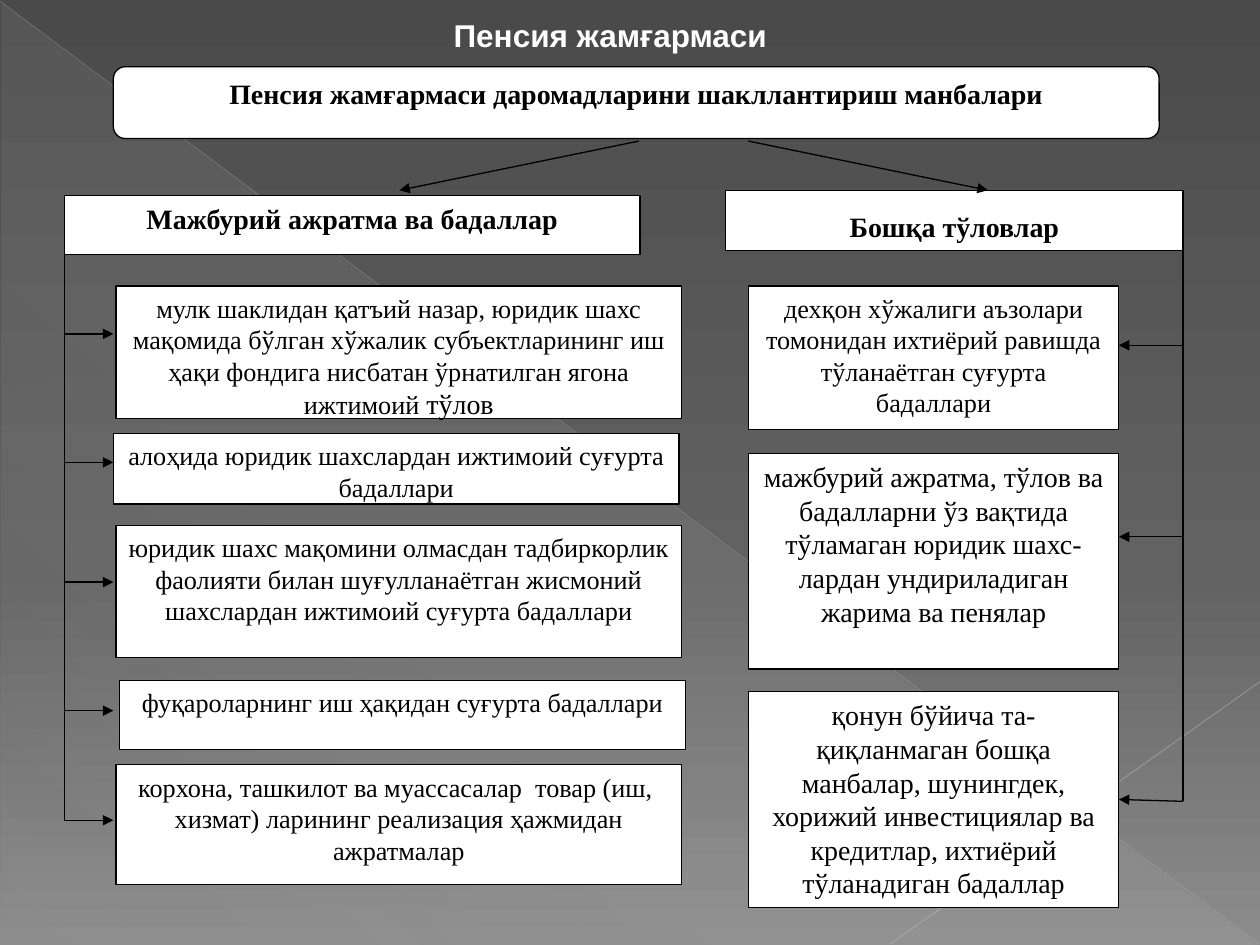
from lxml import etree
from pptx import Presentation
from pptx import util as u
from pptx.dml.color import RGBColor
from pptx.enum import shapes, text
from pptx.oxml import parse_xml
from pptx.oxml.ns import nsdecls, qn

Inches = u.Inches
SERIF = "Times New Roman"
BLACK, WHITE = "000000", "FFFFFF"


def color(value):
    return RGBColor.from_string(value)


def gradient(stops, angle):
    """Gradient fill from (position %, colour, opacity %) stops."""
    entries = "".join(
        f'<a:gs pos="{position * 1000}"><a:srgbClr val="{value}">'
        f'<a:alpha val="{opacity * 1000}"/></a:srgbClr></a:gs>'
        for position, value, opacity in stops)
    return parse_xml(f'<a:gradFill {nsdecls("a")} rotWithShape="1"><a:gsLst>{entries}</a:gsLst>'
                     f'<a:lin ang="{angle * 60000}" scaled="0"/></a:gradFill>')


def add_line(slide, start, end, value=BLACK, width=0.75, arrow=False, opacity=100):
    connector = slide.shapes.add_connector(
        shapes.MSO_CONNECTOR.STRAIGHT, *map(Inches, (*start, *end)))
    connector.line.color.rgb = color(value)
    connector.line.width = u.Pt(width)
    outline = connector.line._get_or_add_ln()
    if opacity < 100:
        shade = outline.find(".//" + qn("a:srgbClr"))
        etree.SubElement(shade, qn("a:alpha"), val=str(opacity * 1000))
    if arrow:
        etree.SubElement(outline, qn("a:tailEnd"), type="triangle")
    etree.SubElement(connector._element.spPr, qn("a:effectLst"))
    return connector


def add_run(paragraph, words, size, font=SERIF, value=BLACK, bold=False):
    run = paragraph.add_run()
    run.text = words
    run.font.size = u.Pt(size)
    run.font.name = font
    run.font.bold = bold
    run.font.color.rgb = color(value)


def add_box(slide, box, runs, bold=False, rounded=False):
    """White outlined box with centred text given as (words, size) runs."""
    kind = shapes.MSO_SHAPE.ROUNDED_RECTANGLE if rounded else shapes.MSO_SHAPE.RECTANGLE
    shape = slide.shapes.add_shape(kind, *map(Inches, box))
    shape.shadow.inherit = False
    shape.fill.solid()
    shape.fill.fore_color.rgb = color(WHITE)
    shape.line.color.rgb = color(BLACK)
    shape.line.width = u.Pt(0.75)
    frame = shape.text_frame
    frame.word_wrap = True
    frame.vertical_anchor = text.MSO_ANCHOR.TOP
    paragraph = frame.paragraphs[0]
    paragraph.alignment = text.PP_ALIGN.CENTER
    for words, size in runs:
        add_run(paragraph, words, size, bold=bold)
    return shape


def add_background(slide, width, height):
    fill = slide.background.fill
    fill.solid()
    properties = slide._element.cSld.find(qn("p:bg")).find(qn("p:bgPr"))
    properties.replace(properties.find(qn("a:solidFill")), gradient(
        [(0, "4A4A4A", 100), (60, "626262", 100), (100, "8C8C8C", 100)], 90))

    # Faint triangle and diagonal lines
    triangle = slide.shapes.add_shape(
        shapes.MSO_SHAPE.RIGHT_TRIANGLE, *map(Inches, (0.01, 0.02, width - 0.02, height - 0.02)))
    triangle.shadow.inherit = False
    triangle.line.fill.background()
    triangle.fill.solid()
    properties = triangle._element.spPr
    properties.replace(properties.find(qn("a:solidFill")), gradient(
        [(0, "D2D2D2", 10), (70, "D2D2D2", 8), (100, "D2D2D2", 1)], 133))
    add_line(slide, (0, 0.01), (width - 0.01, height - 0.01), "BFBFBF", 0.39, opacity=35)
    add_line(slide, (width, 5.41), (7.07, height - 0.01), "C6C6C6", 0.47, opacity=45)


def add_title(slide, box, words):
    title = slide.shapes.title
    title.left, title.top, title.width, title.height = map(Inches, box)
    frame = title.text_frame
    frame.word_wrap = False
    frame.auto_size = text.MSO_AUTO_SIZE.NONE
    frame.vertical_anchor = text.MSO_ANCHOR.MIDDLE
    paragraph = frame.paragraphs[0]
    paragraph.alignment = text.PP_ALIGN.LEFT
    add_run(paragraph, words, 18, "Arial", WHITE, bold=True)


def add_branch(slide, heading_box, heading, items, trunk, tip, side):
    """Heading, item boxes, and a trunk line with an arrow to each item.

    items holds (box, arrow height, runs); trunk is (x, top); side is the
    connection site of the items that faces the trunk.
    """
    header = add_box(slide, heading_box, [(heading, 16)], bold=True)
    trunk_x, trunk_top = trunk
    add_line(slide, trunk, (trunk_x, items[-1][1]))
    for box, arrow_y, runs in items:
        shape = add_box(slide, box, runs)
        arrow = add_line(slide, (trunk_x, arrow_y), (tip, arrow_y), arrow=True)
        if abs(box[1] + box[3] / 2 - arrow_y) < 0.02:
            arrow.end_connect(shape, side)
    return header


def add_contributions(slide, left, top):
    x, width = left + 0.41, 4.49
    items = [
        ((x, 2.27, width, 1.05), 2.65,
         [("мулк шаклидан қатъий назар, юридик шахс мақомида бўлган хўжалик субъектларининг "
           "иш ҳақи фондига нисбатан ўрнатилган ягона ижтимоий", 15), (" тўлов", 16)]),
        ((x - 0.02, 3.44, width, 0.56), 3.67,
         [("алоҳида юридик шахслардан ижтимоий суғурта бадаллари", 15)]),
        ((x, 4.17, width, 1.05), 4.62,
         [("юридик шахс мақомини олмасдан тадбиркорлик фаолияти билан шуғулланаётган "
           "жисмоний шахслардан ижтимоий суғурта бадаллари", 15)]),
        ((x + 0.03, 5.4, width, 0.55), 5.64,
         [("фуқароларнинг иш ҳақидан суғурта бадаллари", 15)]),
        ((x, 6.07, width, 0.95), 6.51,
         [("корхона, ташкилот ва муассасалар  товар (иш,  хизмат) ларининг реализация "
           "ҳажмидан ажратмалар", 15)]),
    ]
    add_branch(slide, (left, top, 4.57, 0.47), "Мажбурий ажратма ва бадаллар",
               items, (left, top + 0.31), left + 0.39, 1)


def add_other_payments(slide, left, top):
    x, width = left + 0.18, 2.94
    items = [
        ((x, 2.27, width, 1.14), 2.74,
         [("дехқон хўжалиги аъзолари томонидан ихтиёрий равишда тўланаётган суғурта "
           "бадаллари", 15)]),
        ((x, 3.6, width, 1.71), 4.26,
         [("мажбурий ажратма, тўлов ва бадалларни ўз вақтида тўламаган юридик шахс-лардан "
           "ундириладиган жарима ва пенялар", 16)]),
        ((x, 5.49, width, 1.71), 6.36,
         [("қонун бўйича та-қиқланмаган бошқа манбалар, шунингдек, хорижий инвестициялар ва "
           "кредитлар, ихтиёрий тўланадиган бадаллар", 16)]),
    ]
    header = add_branch(slide, (left, top, 3.63, 0.48), "Бошқа тўловлар",
                        items, (left + 3.63, top + 0.47), x + width, 3)
    header.text_frame.margin_top = Inches(0.15)


def main():
    presentation = Presentation()
    presentation.slide_width, presentation.slide_height = Inches(10), Inches(7.5)
    slide = presentation.slides.add_slide(presentation.slide_layouts[5])

    add_background(slide, 10, 7.5)
    add_title(slide, (3.5, 0.08, 2.7, 0.4), "Пенсия жамғармаси")
    add_box(slide, (0.9, 0.53, 8.3, 0.57),
            [("Пенсия жамғармаси даромадларини шакллантириш манбалари", 16)],
            bold=True, rounded=True)
    add_contributions(slide, 0.51, 1.55)
    add_other_payments(slide, 5.76, 1.51)

    # Arrows from the sources box to both branches
    add_line(slide, (5.07, 1.12), (3.17, 1.51), arrow=True)
    add_line(slide, (5.94, 1.12), (7.84, 1.51), arrow=True)
    presentation.save("out.pptx")


if __name__ == "__main__":
    main()
